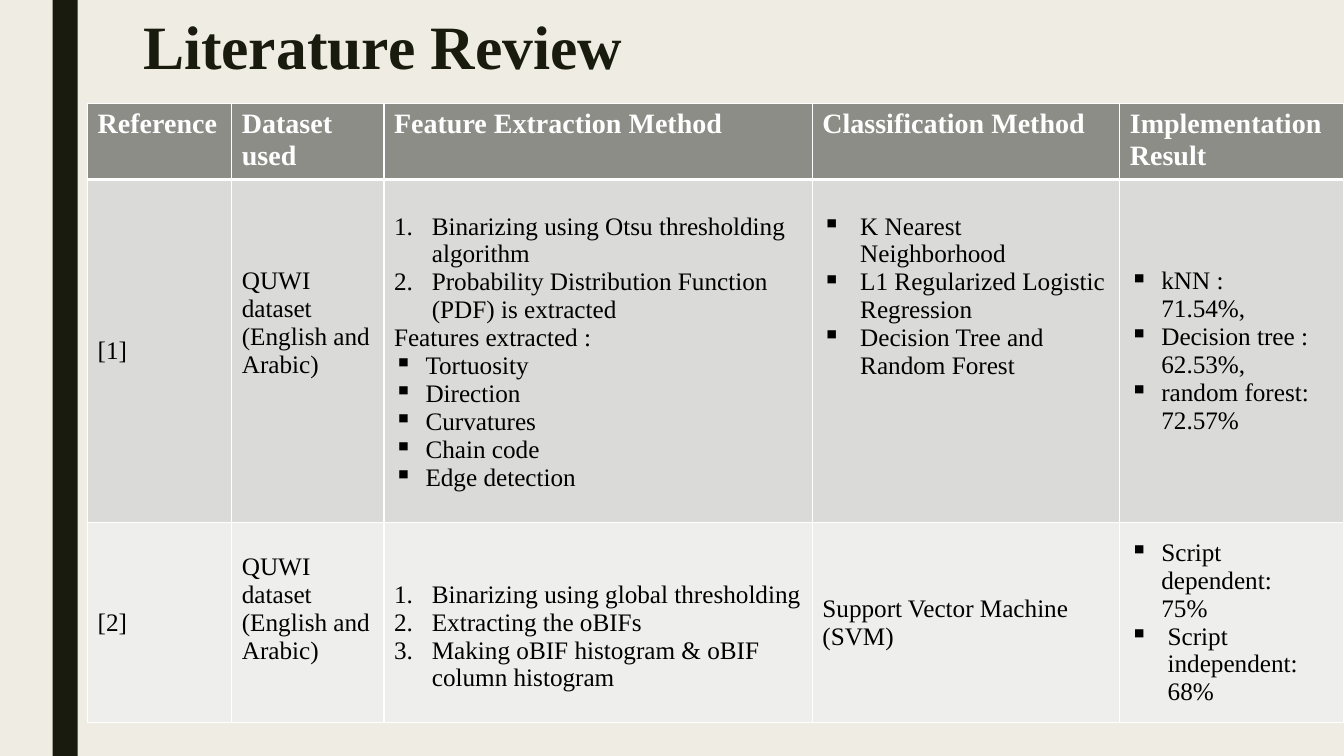
"""Build the literature review slide with its comparison table."""
import dataclasses

import pptx
import pptx.dml.color
import pptx.enum.shapes
import pptx.enum.text
import pptx.oxml
import pptx.oxml.ns
import pptx.util

Pt = pptx.util.Pt
ANCHOR = pptx.enum.text.MSO_ANCHOR


@dataclasses.dataclass(frozen=True)
class Theme:
    font: str = "Times New Roman"
    background: str = "EFEDE3"
    dark: str = "191B0E"
    light: str = "FFFFFF"
    text: str = "000000"
    header_fill: str = "8C8D86"
    row_fills: tuple = ("DADBD9", "EEEEED")
    title_size: int = 44
    header_size: int = 20
    body_size: int = 18


@dataclasses.dataclass(frozen=True)
class Entry:
    lines: tuple
    top: float = 3.6
    bottom: float = 3.6
    anchor: ANCHOR = ANCHOR.MIDDLE


@dataclasses.dataclass(frozen=True)
class Item:
    text: str
    indent: float = 0
    marker: str = ""


def numbered(*texts):
    return tuple(Item(text, 27, "1.") for text in texts)


def bulleted(*texts, indent=22.5):
    return tuple(Item(text, indent, "▪") for text in texts)


HEADERS = ("Reference", "Dataset used", "Feature Extraction Method",
           "Classification Method", "Implementation Result")
COLUMN_WIDTHS = (103, 108.7, 306, 219.6, 159.8)
ROW_HEIGHTS = (54, 245, 143)
LINE = 20
DATASET = (Item("QUWI dataset (English and Arabic)"),)
STUDIES = (
    (
        Entry((Item("[1]"),)),
        Entry(DATASET, bottom=3.6 + 2 * LINE),
        Entry(numbered("Binarizing using Otsu thresholding algorithm",
                       "Probability Distribution Function (PDF) is extracted")
              + (Item("Features extracted :"),)
              + bulleted("Tortuosity", "Direction", "Curvatures", "Chain code",
                         "Edge detection"),
              top=3.6 + LINE, anchor=ANCHOR.TOP),
        Entry(bulleted("K Nearest Neighborhood", "L1 Regularized Logistic Regression",
                       "Decision Tree and Random Forest", indent=27),
              top=3.6 + LINE, anchor=ANCHOR.TOP),
        Entry(bulleted("kNN :\v71.54%,", "Decision tree : 62.53%,",
                       "random forest: 72.57%")),
    ),
    (
        Entry((Item("[2]"),)),
        Entry(DATASET, bottom=3.6 + LINE),
        Entry(numbered("Binarizing using global thresholding", "Extracting the oBIFs",
                       "Making oBIF histogram & oBIF column histogram"),
              top=3.6 + LINE),
        Entry((Item("Support Vector Machine (SVM)"),)),
        Entry(bulleted("Script dependent:\v75%")
              + bulleted("Script independent: 68%", indent=27)),
    ),
)


class Deck:
    def __init__(self, theme):
        self.theme = theme
        self.presentation = pptx.Presentation()
        self.presentation.slide_width = Pt(960)
        self.presentation.slide_height = Pt(540)
        self.slide = self.presentation.slides.add_slide(
            self.presentation.slide_layouts.get_by_name("Title Only"))
        self.paint(self.slide.background.fill, theme.background)

    def paint(self, fill, color):
        fill.solid()
        fill.fore_color.rgb = pptx.dml.color.RGBColor.from_string(color)

    def style(self, paragraph, size, color, bold=False):
        font = paragraph.font
        font.name, font.size, font.bold = self.theme.font, Pt(size), bold
        font.color.rgb = pptx.dml.color.RGBColor.from_string(color)

    def bar(self, left, top, width, height):
        bar = self.slide.shapes.add_shape(
            pptx.enum.shapes.MSO_SHAPE.RECTANGLE, Pt(left), Pt(top), Pt(width), Pt(height))
        bar.shadow.inherit = False
        self.paint(bar.fill, self.theme.dark)
        bar.line.fill.background()

    def title(self, text, left, top, width, height):
        title = self.slide.shapes.title
        title.left, title.top = Pt(left), Pt(top)
        title.width, title.height = Pt(width), Pt(height)
        frame = title.text_frame
        frame.text = text
        frame.vertical_anchor = ANCHOR.TOP
        frame.auto_size = pptx.enum.text.MSO_AUTO_SIZE.NONE
        heading = frame.paragraphs[0]
        heading.alignment = pptx.enum.text.PP_ALIGN.LEFT
        heading.line_spacing = 0.89
        self.style(heading, self.theme.title_size, self.theme.dark, True)

    def marker(self, paragraph, item):
        properties = paragraph._p.get_or_add_pPr()
        properties.set("marL", str(Pt(item.indent)))
        properties.set("indent", str(-Pt(item.indent)))
        namespace = pptx.oxml.ns.nsdecls("a")
        if item.marker == "1.":
            bullet = f'<a:buAutoNum {namespace} type="arabicPeriod"/>'
        else:
            bullet = f'<a:buChar {namespace} char="{item.marker}"/>'
        properties.append(pptx.oxml.parse_xml(bullet))

    def cell(self, cell, entry, fill, size, color, bold=False, bottom_border=1):
        properties = cell._tc.get_or_add_tcPr()
        for side, width in (("L", 1), ("R", 1), ("T", 1), ("B", bottom_border)):
            properties.append(pptx.oxml.parse_xml(
                f'<a:ln{side} {pptx.oxml.ns.nsdecls("a")} w="{Pt(width)}"><a:solidFill>'
                f'<a:srgbClr val="{self.theme.light}"/></a:solidFill></a:ln{side}>'))
        self.paint(cell.fill, fill)
        cell.margin_top, cell.margin_bottom = Pt(entry.top), Pt(entry.bottom)
        cell.vertical_anchor = entry.anchor
        frame = cell.text_frame
        for index, item in enumerate(entry.lines):
            paragraph = frame.add_paragraph() if index else frame.paragraphs[0]
            paragraph.text = item.text
            if item.marker:
                self.marker(paragraph, item)
            self.style(paragraph, size, color, bold)

    def table(self, left, top, widths, heights, headers, studies):
        theme = self.theme
        table = self.slide.shapes.add_table(
            len(heights), len(widths), Pt(left), Pt(top),
            Pt(sum(widths)), Pt(sum(heights))).table
        table.horz_banding = False
        for column, width in zip(table.columns, widths):
            column.width = Pt(width)
        for row, height in zip(table.rows, heights):
            row.height = Pt(height)
        for column, header in enumerate(headers):
            self.cell(table.cell(0, column), Entry((Item(header),), anchor=ANCHOR.TOP),
                      theme.header_fill, theme.header_size, theme.light, True, 3)
        for row, (study, fill) in enumerate(zip(studies, theme.row_fills), 1):
            for column, entry in enumerate(study):
                self.cell(table.cell(row, column), entry, fill, theme.body_size, theme.text)


def main():
    deck = Deck(Theme())
    deck.bar(37.5, 0, 18, 540)
    deck.title("Literature Review", 95, 8.6, 756, 116.6)
    deck.table(62.6, 74.2, COLUMN_WIDTHS, ROW_HEIGHTS, HEADERS, STUDIES)
    deck.presentation.save("out.pptx")


if __name__ == "__main__":
    main()
